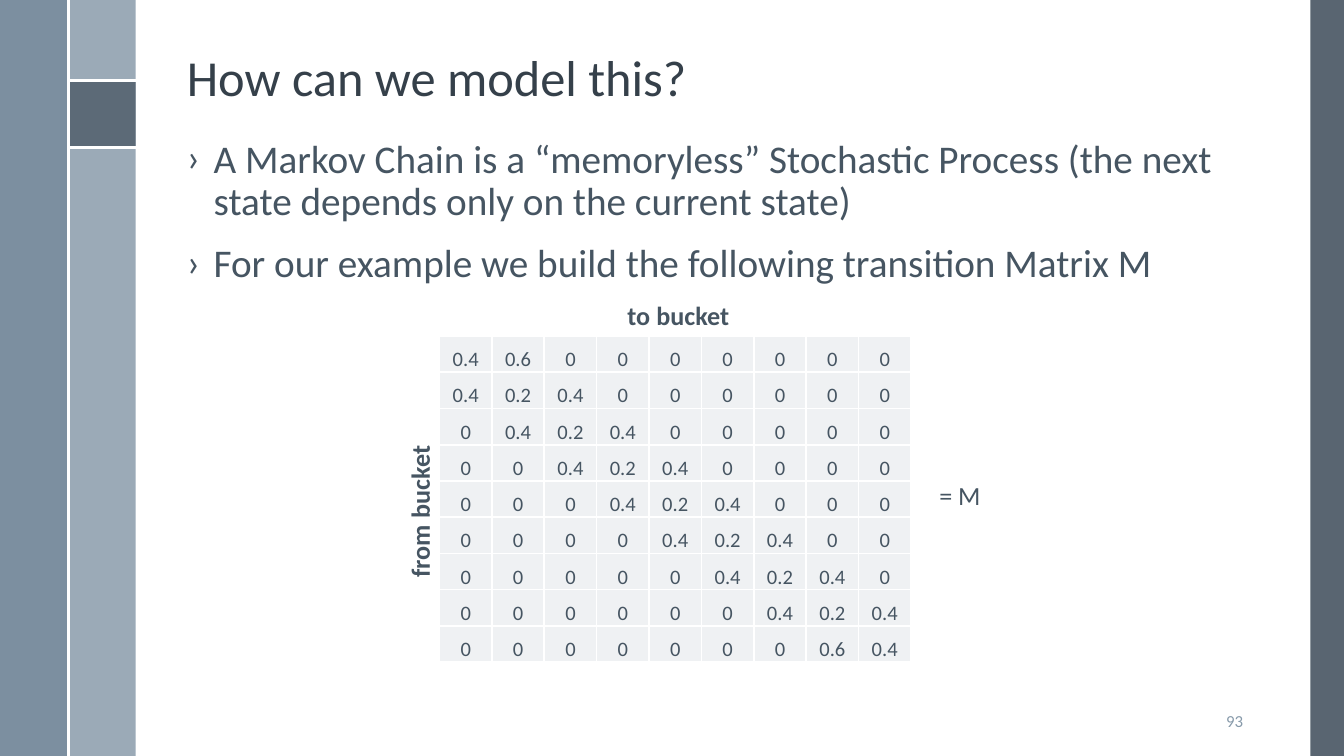
"""Build the slide that shows the transition matrix of a Markov chain."""
from lxml import etree
from pptx import Presentation
from pptx import util as u
from pptx.dml.color import RGBColor
from pptx.enum import shapes, text
from pptx.oxml import ns

SLATE = RGBColor(0x47, 0x55, 0x62)
MIST = RGBColor(0x9B, 0xAA, 0xB7)
STEEL = RGBColor(0x6A, 0x80, 0x93)
INK = RGBColor(0x35, 0x40, 0x4A)
BODY = RGBColor(0x46, 0x55, 0x62)
PALE = RGBColor(0x87, 0x9A, 0xAA)
CELL = RGBColor(0xEF, 0xF1, 0xF3)
WHITE = RGBColor(0xFF, 0xFF, 0xFF)

FONT = "Calibri"
WIDTH = 10
HEIGHT = WIDTH * 9 / 16
BAND = WIDTH / 20
RAIL = 0.51
MARK = 0.6
STATES = 9
COLUMN, ROW = 0.39, 0.27


def style(paragraph, size, color, bold=False):
    paragraph.font.name = FONT
    paragraph.font.size = u.Pt(size)
    paragraph.font.bold = bold
    paragraph.font.color.rgb = color


def place(shape, left, top, width, height):
    shape.left, shape.top = u.Inches(left), u.Inches(top)
    shape.width, shape.height = u.Inches(width), u.Inches(height)
    frame = shape.text_frame
    frame.auto_size = text.MSO_AUTO_SIZE.NONE
    frame.word_wrap = True
    frame.margin_left = frame.margin_right = u.Inches(0.08)
    frame.margin_top = frame.margin_bottom = u.Inches(0.04)
    return frame


deck = Presentation()
deck.slide_width, deck.slide_height = u.Inches(WIDTH), u.Inches(HEIGHT)
page = deck.slides.add_slide(deck.slide_layouts[1])

for left, top, width, height, color, opacity in (
    (WIDTH - BAND / 2, 0, BAND / 2, HEIGHT, SLATE, 90),
    (RAIL, 0, BAND, HEIGHT, MIST, 100),
    (0, 0, BAND, HEIGHT, STEEL, 88),
    (RAIL, MARK, BAND, BAND, SLATE, 75),
):
    bar = page.shapes.add_shape(
        shapes.MSO_SHAPE.RECTANGLE,
        u.Inches(left), u.Inches(top), u.Inches(width), u.Inches(height))
    bar.shadow.inherit = False
    bar.line.fill.background()
    bar.fill.solid()
    bar.fill.fore_color.rgb = color
    if opacity < 100:
        shade = bar.element.spPr.find(".//" + ns.qn("a:srgbClr"))
        etree.SubElement(shade, ns.qn("a:alpha"), val=str(opacity * 1000))

for start_x, start_y, end_x, end_y in (
    (RAIL, MARK, RAIL + BAND, MARK),
    (RAIL, MARK + BAND, RAIL + BAND, MARK + BAND),
    (RAIL, 0, RAIL, HEIGHT),
):
    rule = page.shapes.add_connector(
        shapes.MSO_CONNECTOR.STRAIGHT,
        u.Inches(start_x), u.Inches(start_y), u.Inches(end_x), u.Inches(end_y))
    rule.line.color.rgb = WHITE
    rule.line.width = u.Pt(1.5)
    etree.SubElement(rule.element.spPr, ns.qn("a:effectLst"))

number_box = page.shapes.add_textbox(0, 0, 0, 0)
frame = place(number_box, 8.83, 5.21, BAND, 0.3)
frame.vertical_anchor = text.MSO_ANCHOR.MIDDLE
para = frame.paragraphs[0]
para.text = "93"
para.alignment = text.PP_ALIGN.RIGHT
style(para, 9, PALE)

frame = place(page.shapes.title, 1.31, 0.1, 8.03, 0.74)
frame.vertical_anchor = text.MSO_ANCHOR.BOTTOM
para = frame.paragraphs[0]
para.text = "How can we model this?"
para.alignment = text.PP_ALIGN.LEFT
para.line_spacing = 0.9
style(para, 27, INK)

frame = place(page.placeholders[1], 1.31, 1, 8.03, 4.41)
frame.vertical_anchor = text.MSO_ANCHOR.TOP
points = (
    "A Markov Chain is a “memoryless” Stochastic Process "
    "(the next state depends only on the current state)",
    "For our example we build the following transition Matrix M",
)
for index, point in enumerate(points):
    para = frame.add_paragraph() if index else frame.paragraphs[0]
    para.text = point
    para.line_spacing = 0.9
    para.space_before = u.Pt(10.5 if index else 0)
    properties = para._p.get_or_add_pPr()
    properties.set("marL", str(u.Inches(0.2)))
    properties.set("indent", str(-u.Inches(0.2)))
    etree.SubElement(properties, ns.qn("a:buFont"), typeface=FONT)
    etree.SubElement(properties, ns.qn("a:buChar"), char="›")
    style(para, 21, BODY)

matrix = [["0"] * STATES for _ in range(STATES)]
for state in range(STATES):
    matrix[state][state] = "0.2"
    if state:
        matrix[state][state - 1] = matrix[state - 1][state] = "0.4"
matrix[0][:2] = ["0.4", "0.6"]
matrix[-1][-2:] = ["0.6", "0.4"]

table = page.shapes.add_table(
    STATES, STATES, u.Inches(3.27), u.Inches(2.5),
    u.Inches(STATES * COLUMN), u.Inches(STATES * ROW)).table
table.first_row = table.horz_banding = False
for column in table.columns:
    column.width = u.Inches(COLUMN)
for row, values in zip(table.rows, matrix):
    row.height = u.Inches(ROW)
    for cell, value in zip(row.cells, values):
        cell.margin_left = cell.margin_right = cell.margin_top = u.Inches(0.01)
        cell.margin_bottom = 0
        cell.vertical_anchor = text.MSO_ANCHOR.BOTTOM
        for side in ("a:lnL", "a:lnR", "a:lnT", "a:lnB"):
            border = etree.SubElement(
                cell._tc.get_or_add_tcPr(), ns.qn(side), w=str(u.Pt(1)))
            paint = etree.SubElement(border, ns.qn("a:solidFill"))
            etree.SubElement(paint, ns.qn("a:srgbClr"), val=str(WHITE))
        cell.fill.solid()
        cell.fill.fore_color.rgb = CELL
        para = cell.text_frame.paragraphs[0]
        para.text = value
        para.alignment = text.PP_ALIGN.CENTER
        style(para, 11, BODY)

for label, left, top, width, height, rotation, bold in (
    ("from bucket", 2.51, 3.61, 1.23, 0.34, 270, True),
    ("to bucket", 4.57, 2.18, 0.98, 0.34, 0, True),
    ("= M", 6.89, 3.52, 0.78, 0.5, 0, False),
):
    box = page.shapes.add_textbox(
        u.Inches(left), u.Inches(top), u.Inches(width), u.Inches(height))
    box.rotation = rotation
    box.text_frame.word_wrap = False
    box.text_frame.auto_size = text.MSO_AUTO_SIZE.SHAPE_TO_FIT_TEXT
    para = box.text_frame.paragraphs[0]
    para.text = label
    style(para, 14, BODY, bold)

deck.save("out.pptx")
